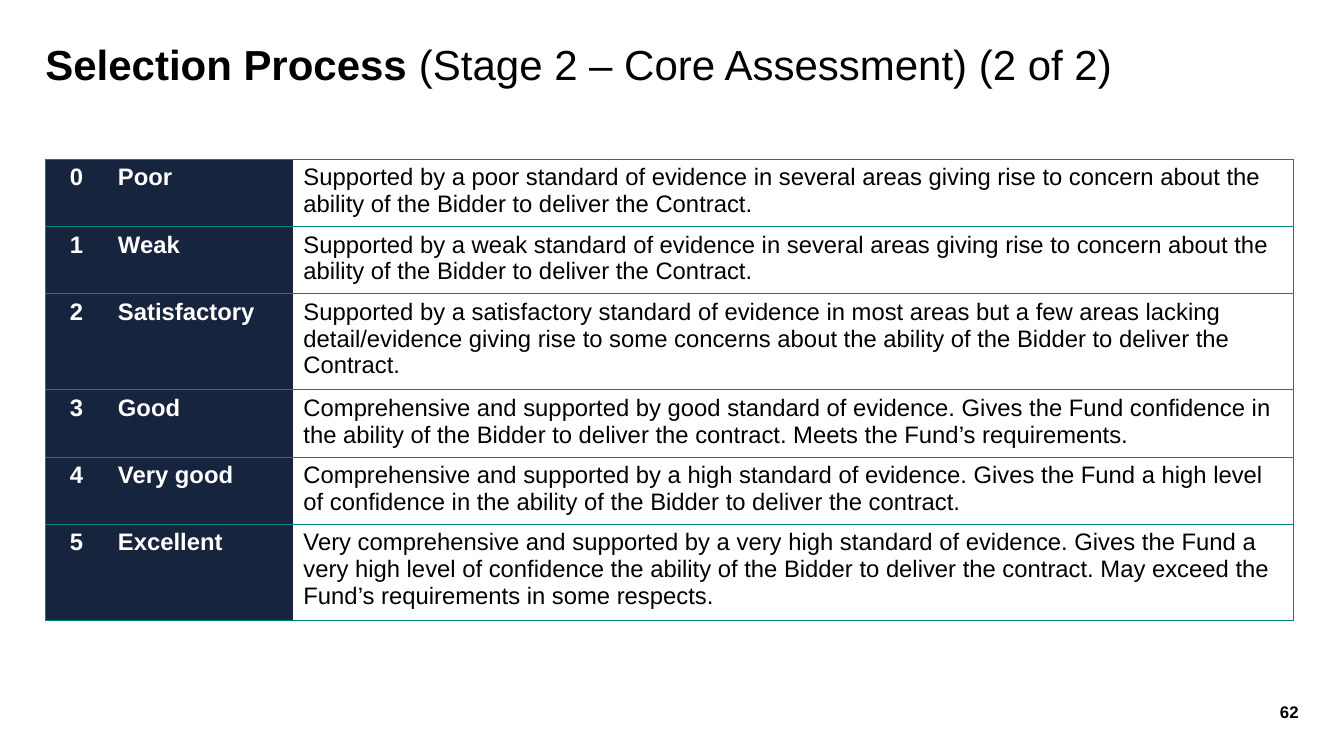
from lxml.etree import SubElement, Element
from pptx import Presentation
from pptx.dml.color import RGBColor
from pptx.enum.text import MSO_ANCHOR as Anchor, PP_ALIGN as Align
from pptx.oxml.ns import qn
from pptx.util import Inches, Pt

COLORS = {"navy": "17243D", "teal": "00847E", "black": "000000", "white": "FFFFFF"}
FONT = "Arial"
COLUMN_WIDTHS = [0.62, 1.84, 9.92]
TWO_LINES, THREE_LINES = 0.63, 0.9

# Score label, row height, description; the score is the row's index
SCORES = [
    ("Poor", TWO_LINES,
     "Supported by a poor standard of evidence in several areas giving rise to concern "
     "about the ability of the Bidder to deliver the Contract."),
    ("Weak", TWO_LINES,
     "Supported by a weak standard of evidence in several areas giving rise to concern "
     "about the ability of the Bidder to deliver the Contract."),
    ("Satisfactory", THREE_LINES,
     "Supported by a satisfactory standard of evidence in most areas but a few areas "
     "lacking detail/evidence giving rise to some concerns about the ability of the "
     "Bidder to deliver the Contract."),
    ("Good", TWO_LINES,
     "Comprehensive and supported by good standard of evidence. Gives the Fund confidence "
     "in the ability of the Bidder to deliver the contract. Meets the Fund’s requirements."),
    ("Very good", TWO_LINES,
     "Comprehensive and supported by a high standard of evidence. Gives the Fund a high "
     "level of confidence in the ability of the Bidder to deliver the contract."),
    ("Excellent", THREE_LINES,
     "Very comprehensive and supported by a very high standard of evidence. Gives the Fund "
     "a very high level of confidence the ability of the Bidder to deliver the contract. "
     "May exceed the Fund’s requirements in some respects."),
]


def format_run(run, size, color, bold):
    run.font.name = FONT
    run.font.size = Pt(size)
    run.font.bold = bold
    run.font.color.rgb = RGBColor.from_string(COLORS[color])


def add_text(slide, left, top, width, height, parts, size, align=Align.LEFT,
             anchor=Anchor.TOP, line_spacing=1.0):
    """Add a one-paragraph text box from (text, bold) parts."""
    box = slide.shapes.add_textbox(Inches(left), Inches(top), Inches(width), Inches(height))
    frame = box.text_frame
    frame.word_wrap = True
    frame.vertical_anchor = anchor
    frame.margin_left = frame.margin_right = frame.margin_top = frame.margin_bottom = 0
    paragraph = frame.paragraphs[0]
    paragraph.alignment = align
    paragraph.line_spacing = line_spacing
    for text, bold in parts:
        run = paragraph.add_run()
        run.text = text
        format_run(run, size, "black", bold)


def set_borders(cell, visible_sides):
    """Draw thin teal lines on the visible sides and none on the others."""
    properties = cell._tc.get_or_add_tcPr()
    for index, side in enumerate("LRTB"):
        line = Element(qn(f"a:ln{side}"), w=str(Pt(0.5)))
        if side in visible_sides:
            fill = SubElement(line, qn("a:solidFill"))
            SubElement(fill, qn("a:srgbClr"), val=COLORS["teal"])
        else:
            SubElement(line, qn("a:noFill"))
        properties.insert(index, line)


def fill_cell(cell, text, is_label, align, borders):
    cell.text_frame.text = text
    paragraph = cell.text_frame.paragraphs[0]
    paragraph.alignment = align
    format_run(paragraph.runs[0], 17, "white" if is_label else "black", is_label)
    if is_label:
        cell.fill.solid()
        cell.fill.fore_color.rgb = RGBColor.from_string(COLORS["navy"])
    else:
        cell.fill.background()
    set_borders(cell, borders)


def add_score_table(slide, left, top):
    height = sum(row_height for _, row_height, _ in SCORES)
    table = slide.shapes.add_table(
        len(SCORES), len(COLUMN_WIDTHS), Inches(left), Inches(top),
        Inches(sum(COLUMN_WIDTHS)), Inches(height)).table
    table.first_row = table.horz_banding = False
    for column, width in zip(table.columns, COLUMN_WIDTHS):
        column.width = Inches(width)
    for score, (label, row_height, description) in enumerate(SCORES):
        table.rows[score].height = Inches(row_height)
        fill_cell(table.cell(score, 0), str(score), True, Align.CENTER, "LTB")
        fill_cell(table.cell(score, 1), label, True, Align.LEFT, "TB")
        fill_cell(table.cell(score, 2), description, False, Align.LEFT, "RTB")


def main():
    presentation = Presentation()
    presentation.slide_width = Inches(13.33)
    presentation.slide_height = Inches(7.5)
    slide = presentation.slides.add_slide(presentation.slide_layouts[6])

    # Title
    add_text(slide, 0.45, 0.44, 12.38, 0.93,
             [("Selection Process ", True), ("(Stage 2 – Core Assessment) (2 of 2)", False)],
             30, line_spacing=0.9)

    # Scoring scale
    add_score_table(slide, 0.45, 1.58)

    # Page number
    add_text(slide, 12.17, 6.86, 0.71, 0.4, [("62", True)], 12, Align.RIGHT, Anchor.MIDDLE)

    presentation.save("out.pptx")


if __name__ == "__main__":
    main()
